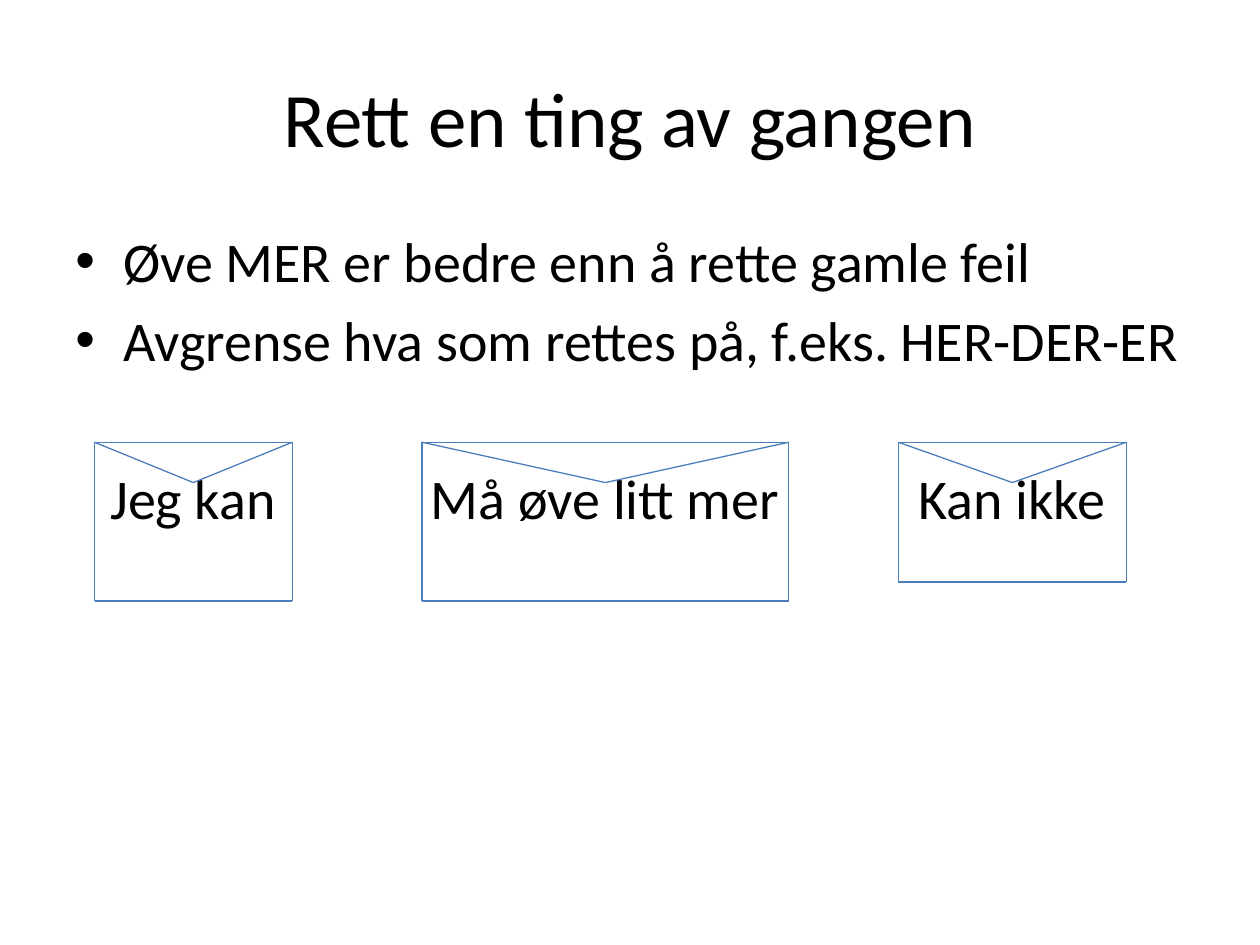
from dataclasses import dataclass
from itertools import pairwise

from lxml import etree
from pptx import Presentation
from pptx import util as u
from pptx.dml.color import RGBColor
from pptx.enum import shapes, text
from pptx.oxml import ns


@dataclass(frozen=True)
class Theme:
    font: str = "Calibri"
    ink: RGBColor = RGBColor(0, 0, 0)
    edge: RGBColor = RGBColor(0x4B, 0x7E, 0xBC)
    title: int = 44
    body: int = 32
    gap: float = 6.4
    line: float = 0.75


class Page:
    def __init__(self, slide, theme):
        self.slide = slide
        self.theme = theme

    def frame(self, left, top, width, height):
        box = self.slide.shapes.add_textbox(
            u.Inches(left), u.Inches(top), u.Inches(width), u.Inches(height))
        box.text_frame.word_wrap = True
        return box.text_frame

    def add_words(self, para, words, size):
        run = para.add_run()
        run.text = words
        run.font.name = self.theme.font
        run.font.size = u.Pt(size)
        run.font.color.rgb = self.theme.ink

    def title(self, words, *area):
        frame = self.frame(*area)
        frame.vertical_anchor = text.MSO_ANCHOR.MIDDLE
        para = frame.paragraphs[0]
        para.alignment = text.PP_ALIGN.CENTER
        self.add_words(para, words, self.theme.title)

    def bullets(self, items, *area):
        frame = self.frame(*area)
        for i, words in enumerate(items):
            para = frame.add_paragraph() if i else frame.paragraphs[0]
            if i:
                para.space_before = u.Pt(self.theme.gap)
            props = para._p.get_or_add_pPr()
            props.set("marL", str(u.Inches(0.38)))
            props.set("indent", str(u.Inches(-0.38)))
            font = etree.SubElement(props, ns.qn("a:buFont"))
            font.set("typeface", "Arial")
            etree.SubElement(props, ns.qn("a:buChar")).set("char", "•")
            self.add_words(para, words, self.theme.body)
        return frame

    def labels(self, frame, names, stops, before):
        """Add one line with each name centred on its tab stop."""
        para = frame.add_paragraph()
        para.space_before = u.Pt(before)
        tabs = etree.SubElement(para._p.get_or_add_pPr(), ns.qn("a:tabLst"))
        for stop in stops:
            tab = etree.SubElement(tabs, ns.qn("a:tab"))
            tab.set("pos", str(u.Inches(stop)))
            tab.set("algn", "ctr")
        for name in names:
            self.add_words(para, "\t" + name, self.theme.body)

    def line(self, start, end):
        link = self.slide.shapes.add_connector(
            shapes.MSO_CONNECTOR.STRAIGHT, *map(u.Inches, start + end))
        link.line.color.rgb = self.theme.edge
        link.line.width = u.Pt(self.theme.line)
        etree.SubElement(link._element.spPr, ns.qn("a:effectLst"))

    def letter(self, left, right, top, base, fold):
        """Draw an envelope: four sides and a flap."""
        tip = ((left + right) / 2, fold)
        corners = [(left, top), (left, base), (right, base), (right, top)]
        for start, end in pairwise(corners + [corners[0], tip, corners[3]]):
            self.line(start, end)


def main():
    deck = Presentation()
    deck.slide_width, deck.slide_height = u.Inches(10), u.Inches(7.5)
    page = Page(deck.slides.add_slide(deck.slide_layouts[6]), Theme())

    page.title("Rett en ting av gangen", 0.5, 0.3, 9, 1.25)
    left = 0.5
    body = page.bullets(
        ["Øve MER er bedre enn å rette gamle feil",
         "Avgrense hva som rettes på, f.eks. HER-DER-ER"],
        left, 1.75, 9, 4.6)

    letters = [("Jeg kan", 0.75, 2.32, 4.77),
               ("Må øve litt mer", 3.35, 6.26, 4.77),
               ("Kan ikke", 7.13, 8.94, 4.62)]
    inset = 0.1
    page.labels(body, [name for name, *_ in letters],
                [(a + b) / 2 - left - inset for _, a, b, _ in letters], 52)
    for _, a, b, base in letters:
        page.letter(a, b, 3.51, base, 3.83)

    deck.save("out.pptx")


if __name__ == "__main__":
    main()
